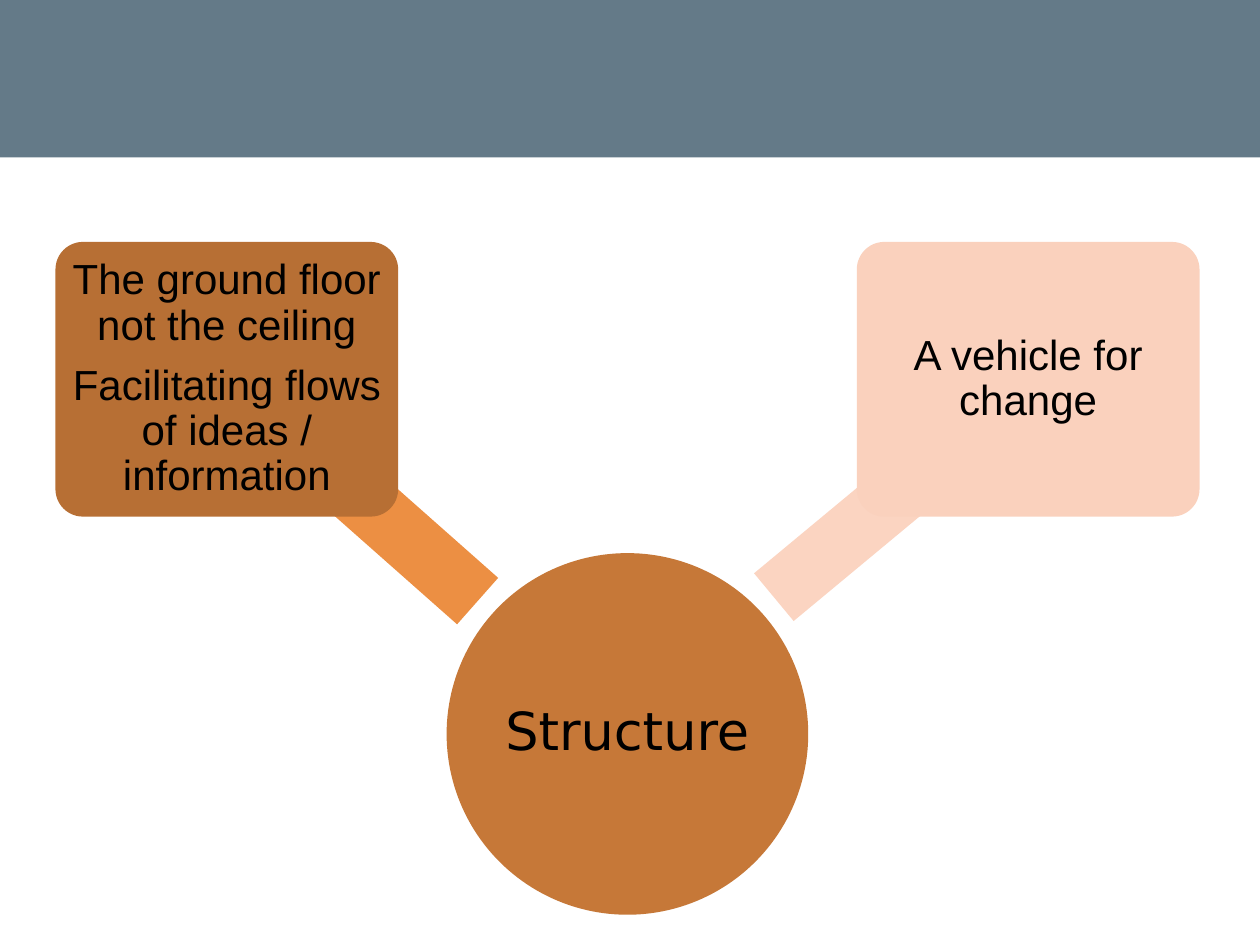
from dataclasses import dataclass

from pptx import Presentation
from pptx.dml.color import RGBColor
from pptx.enum.shapes import MSO_SHAPE
from pptx.enum.text import MSO_ANCHOR, PP_ALIGN
from pptx.shapes.autoshape import Shape
from pptx.slide import Slide
from pptx.util import Inches, Pt

COLUMNS, ROWS = 100, 75
CELL = Inches(0.1)
CENTER = 49.8
BOX_OFFSET = 31.8
ARROW_OFFSET = 21.85


@dataclass(frozen=True)
class Block:
    kind: MSO_SHAPE
    middle: float
    top: float
    width: float
    height: float
    fill: str
    adjustments: tuple[float, ...] = ()
    rotation: float = 0
    paragraphs: tuple[str, ...] = ()
    font: str = "Arial"
    size: int = 24


BLOCKS = (
    Block(MSO_SHAPE.RECTANGLE, COLUMNS / 2, 0, COLUMNS, ROWS / 6, "647A88"),
    Block(MSO_SHAPE.OVAL, CENTER, 43.9, 28.7, 28.7, "C67838",
          paragraphs=("Structure",), font="DejaVu Sans", size=30),
)


def branch(side: int, angle: float, arrow_fill: str, box_fill: str,
           *paragraphs: str) -> tuple[Block, Block]:
    arrow = Block(MSO_SHAPE.LEFT_ARROW, CENTER + side * ARROW_OFFSET, 34.8,
                  26.6, 8.2, arrow_fill, (0.6, 0.5), angle)
    box = Block(MSO_SHAPE.ROUNDED_RECTANGLE, CENTER + side * BOX_OFFSET, 19.2,
                27.2, 21.8, box_fill, (0.1,), paragraphs=paragraphs)
    return arrow, box


BRANCHES = (
    *branch(-1, 41.5, "EC8F43", "B76F34", "The ground floor not the ceiling",
            "Facilitating flows of ideas / information"),
    *branch(1, 140.3, "FBD4C1", "FAD1BD", "A vehicle for change"),
)


def color(value: str) -> RGBColor:
    return RGBColor.from_string(value)


def write_text(shape: Shape, block: Block) -> None:
    frame = shape.text_frame
    frame.word_wrap = True
    frame.vertical_anchor = MSO_ANCHOR.MIDDLE
    frame.margin_left = frame.margin_right = 0
    frame.margin_top = frame.margin_bottom = 0
    for index, text in enumerate(block.paragraphs):
        paragraph = frame.add_paragraph() if index else frame.paragraphs[0]
        paragraph.alignment = PP_ALIGN.CENTER
        paragraph.line_spacing = 0.9
        paragraph.space_after = Pt(block.size * 0.35)
        run = paragraph.add_run()
        run.text = text
        run.font.name = block.font
        run.font.size = Pt(block.size)
        run.font.color.rgb = color("000000")


def draw_block(slide: Slide, block: Block) -> None:
    left = block.middle - block.width / 2
    lengths = (left, block.top, block.width, block.height)
    shape = slide.shapes.add_shape(
        block.kind, *(round(length * CELL) for length in lengths))
    shape.shadow.inherit = False
    shape.fill.solid()
    shape.fill.fore_color.rgb = color(block.fill)
    shape.line.fill.background()
    shape.rotation = block.rotation
    for index, value in enumerate(block.adjustments):
        shape.adjustments[index] = value
    if block.paragraphs:
        write_text(shape, block)


def main() -> None:
    presentation = Presentation()
    presentation.slide_width = COLUMNS * CELL
    presentation.slide_height = ROWS * CELL
    slide = presentation.slides.add_slide(presentation.slide_layouts[6])
    for block in BLOCKS + BRANCHES:
        draw_block(slide, block)
    presentation.save("out.pptx")


if __name__ == "__main__":
    main()
